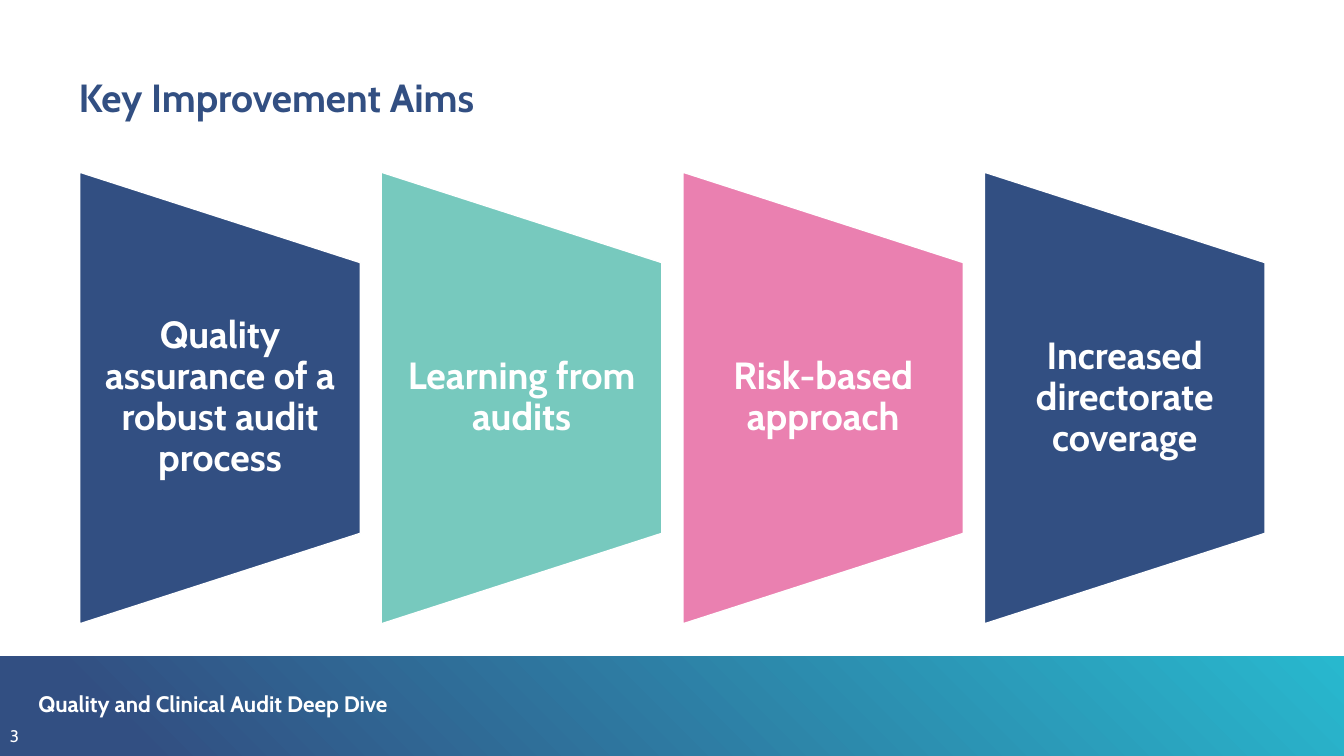
from dataclasses import dataclass

from lxml import etree
from pptx import Presentation
from pptx import util as u
from pptx.dml.color import RGBColor
from pptx.enum import shapes, text
from pptx.oxml import ns


@dataclass(frozen=True)
class Theme:
    """Colours, font and type sizes of the slide."""
    navy: str = "324F82"
    cyan: str = "28B8CE"
    teal: str = "4FB9AB"
    pink: str = "DF3782"
    white: str = "FFFFFF"
    font: str = "Cabin"
    title: int = 28
    panel: int = 27
    footer: int = 16
    number: int = 12


THEME = Theme()
SLIDE_WIDTH, SLIDE_HEIGHT = u.Cm(33.87), u.Cm(19.05)
PANEL_LEFT, PANEL_TOP, PANEL_STEP = 2.01, 4.34, 7.6
PANEL_WIDTH, PANEL_HEIGHT, PANEL_SLOPE = 7.07, 11.38, 2.28
AIMS = [
    ("Quality assurance of a robust audit process", THEME.navy, 100),
    ("Learning from audits", THEME.teal, 77),
    ("Risk-based approach", THEME.pink, 63),
    ("Increased directorate coverage", THEME.navy, 100),
]


def set_margins(frame, horizontal, vertical):
    """Set the inner margins of a text frame in centimetres."""
    frame.margin_left = frame.margin_right = u.Cm(horizontal)
    frame.margin_top = frame.margin_bottom = u.Cm(vertical)


def write(frame, wording, size, color, bold=True, spacing=0.9):
    """Write one styled paragraph and return it."""
    paragraph = frame.paragraphs[0]
    paragraph.text = wording
    paragraph.line_spacing = spacing
    paragraph.font.name = THEME.font
    paragraph.font.size = u.Pt(size)
    paragraph.font.bold = bold
    paragraph.font.color.rgb = RGBColor.from_string(color)
    return paragraph


def add_label(slide, box, wording, size, color):
    """Add a bold text box without margins."""
    frame = slide.shapes.add_textbox(*map(u.Cm, box)).text_frame
    frame.word_wrap = True
    set_margins(frame, 0, 0)
    write(frame, wording, size, color)


def add_page_number(slide, wording):
    """Add the page number in the bottom left corner."""
    box = slide.shapes.add_textbox(u.Cm(0), u.Cm(18.16), u.Cm(0.9), u.Cm(0.77))
    box.text_frame.word_wrap = False
    write(box.text_frame, wording, THEME.number, THEME.white, bold=False, spacing=1.0)


def add_footer_band(slide):
    """Add the gradient band along the bottom edge."""
    top = u.Cm(16.54)
    band = slide.shapes.add_shape(
        shapes.MSO_SHAPE.RECTANGLE, 0, top, SLIDE_WIDTH, SLIDE_HEIGHT - top)
    band.shadow.inherit = False
    band.line.fill.background()
    band.fill.gradient()
    band.fill.gradient_angle = 45
    stops = [(0.1, THEME.navy), (1.0, THEME.cyan)]
    for stop, (position, color) in zip(band.fill.gradient_stops, stops):
        stop.position = position
        stop.color.rgb = RGBColor.from_string(color)


def set_opacity(shape, percent):
    """Make the solid fill of a shape partly transparent."""
    color = shape.fill._xPr.find(ns.qn("a:solidFill"))[0]
    etree.SubElement(color, ns.qn("a:alpha"), val=str(percent * 1000))


def add_panel(slide, left, wording, color, opacity):
    """Add one tapering panel with centred text."""
    right, bottom = left + PANEL_WIDTH, PANEL_TOP + PANEL_HEIGHT
    corners = [(left, PANEL_TOP), (right, PANEL_TOP + PANEL_SLOPE),
               (right, bottom - PANEL_SLOPE)]
    builder = slide.shapes.build_freeform(u.Cm(left), u.Cm(bottom))
    builder.add_line_segments([(u.Cm(x), u.Cm(y)) for x, y in corners], close=True)
    panel = builder.convert_to_shape()
    panel.shadow.inherit = False
    panel.fill.solid()
    panel.fill.fore_color.rgb = RGBColor.from_string(color)
    if opacity < 100:
        set_opacity(panel, opacity)
    panel.line.color.rgb = RGBColor.from_string(THEME.white)
    panel.line.width = u.Pt(1)
    frame = panel.text_frame
    frame.word_wrap = True
    frame.vertical_anchor = text.MSO_ANCHOR.MIDDLE
    set_margins(frame, 0.48, PANEL_SLOPE)
    paragraph = write(frame, wording, THEME.panel, THEME.white)
    paragraph.alignment = text.PP_ALIGN.CENTER


def main():
    """Build the slide and save it."""
    presentation = Presentation()
    presentation.slide_width, presentation.slide_height = SLIDE_WIDTH, SLIDE_HEIGHT
    slide = presentation.slides.add_slide(presentation.slide_layouts[6])
    add_footer_band(slide)
    add_label(slide, (1.98, 1.98, 29.9, 1.09), "Key Improvement Aims",
              THEME.title, THEME.navy)
    for index, aim in enumerate(AIMS):
        add_panel(slide, PANEL_LEFT + index * PANEL_STEP, *aim)
    add_label(slide, (0.97, 17.48, 9.98, 0.61), "Quality and Clinical Audit Deep Dive",
              THEME.footer, THEME.white)
    add_page_number(slide, "3")
    presentation.save("out.pptx")


if __name__ == "__main__":
    main()
